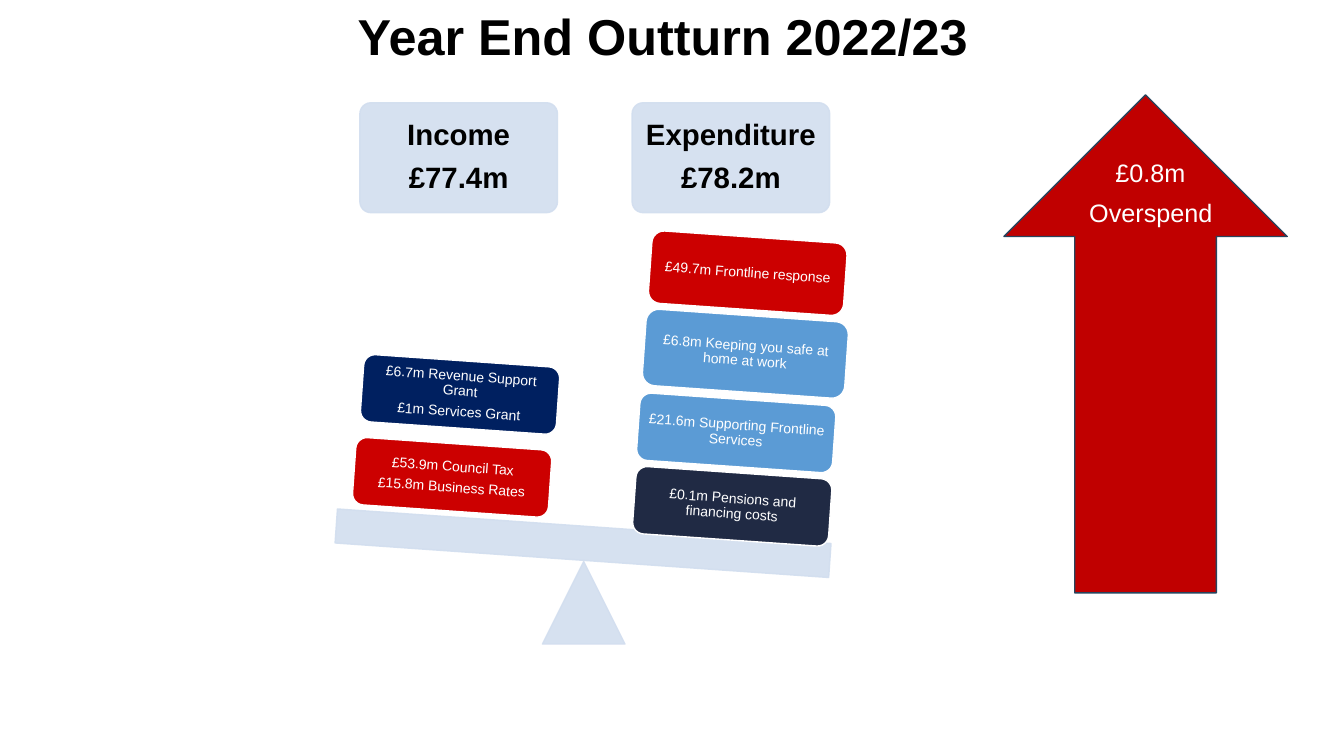
import pptx
import pptx.util
import pptx.dml.color
import pptx.enum.shapes
import pptx.enum.text
import lxml.etree
from dataclasses import dataclass
from pptx.util import Cm, Pt

TITLE = "Year End Outturn 2022/23"
HEADINGS = [("Income", "£77.4m"), ("Expenditure", "£78.2m")]
BLOCKS = [
    (["£53.9m Council Tax", "£15.8m Business Rates"], "red", (8.92, 11.18, 4.95, 1.7)),
    (["£6.7m Revenue Support Grant", "£1m Services Grant"], "navy", (9.12, 9.09, 4.95, 1.7)),
    (["£0.1m Pensions and financing costs"], "ink", (15.98, 11.91, 4.95, 1.7)),
    (["£21.6m Supporting Frontline Services"], "blue", (16.08, 10.06, 4.95, 1.7)),
    (["£6.8m Keeping you safe at home at work"], "blue", (16.23, 7.95, 5.11, 1.93)),
    (["£49.7m Frontline response"], "red", (16.38, 5.97, 4.93, 1.83)),
]
ARROW_LABELS = [("£0.8m", (27.86, 3.84, 2.51, 1.02)),
                ("Overspend", (27.2, 4.85, 3.84, 1.02))]

TITLE_BOX = (8.76, 0, 17.63, 1.8)
FIRST_HEADING = (9.07, 2.59, 4.98, 2.77)
HEADING_STEP = 6.86
FULCRUM = (13.67, 14.15, 2.08, 2.08)
BEAM = (8.46, 13.26, 12.47, 0.86)
ARROW = (25.3, 2.39, 7.14, 12.55)
TILT = 4


@dataclass(frozen=True)
class Theme:
    font: str = "Arial"
    black: str = "000000"
    white: str = "FFFFFF"
    pale: str = "D2DEEF"
    red: str = "CC0000"
    navy: str = "002060"
    blue: str = "5B9BD5"
    ink: str = "202A44"
    arrow: str = "C00000"
    arrow_line: str = "28445D"
    title_size: int = 36
    heading_size: int = 21
    label_size: int = 18
    block_size: int = 10


THEME = Theme()
KIND = pptx.enum.shapes.MSO_SHAPE
ALIGN = pptx.enum.text.PP_ALIGN
ANCHOR = pptx.enum.text.MSO_ANCHOR


def rgb(color):
    return pptx.dml.color.RGBColor.from_string(color)


def lengths(box):
    return [Cm(value) for value in box]


def add_figure(slide, kind, box, fill, line, rotation=0):
    shape = slide.shapes.add_shape(kind, *lengths(box))
    shape.shadow.inherit = False
    shape.rotation = rotation
    shape.fill.solid()
    shape.fill.fore_color.rgb = rgb(fill)
    shape.line.color.rgb = rgb(line)
    shape.line.width = Pt(1)
    return shape


def add_pale_figure(slide, kind, box, rotation=0):
    shape = add_figure(slide, kind, box, THEME.pale, THEME.pale, rotation)
    properties = shape.fill._xPr
    for color in properties.iter(pptx.oxml.ns.qn("a:srgbClr")):
        lxml.etree.SubElement(color, pptx.oxml.ns.qn("a:alpha"), val="90000")
    return shape


def style(paragraph, size, color, bold=False):
    font = paragraph.font
    font.name = THEME.font
    font.size = Pt(size)
    font.bold = bold
    font.color.rgb = rgb(color)


def write_lines(shape, lines, size, color, inset, bold=False):
    frame = shape.text_frame
    frame.word_wrap = True
    frame.vertical_anchor = ANCHOR.MIDDLE
    frame.margin_left = frame.margin_right = Cm(inset)
    frame.margin_top = frame.margin_bottom = Cm(inset)
    frame.text = "\n".join(lines)
    for paragraph in frame.paragraphs:
        paragraph.alignment = ALIGN.CENTER
        paragraph.line_spacing = 0.9
        paragraph.space_after = Pt(0.4 * size)
        style(paragraph, size, color, bold)


def add_title(slide):
    title = slide.shapes.title
    title.left, title.top, title.width, title.height = lengths(TITLE_BOX)
    frame = title.text_frame
    frame.auto_size = pptx.enum.text.MSO_AUTO_SIZE.NONE
    frame.vertical_anchor = ANCHOR.TOP
    frame.text = TITLE
    frame.paragraphs[0].alignment = ALIGN.LEFT
    style(frame.paragraphs[0], THEME.title_size, THEME.black, bold=True)


def add_balance(slide):
    left, top, width, height = FIRST_HEADING
    for index, lines in enumerate(HEADINGS):
        box = (left + index * HEADING_STEP, top, width, height)
        heading = add_pale_figure(slide, KIND.ROUNDED_RECTANGLE, box)
        heading.adjustments[0] = 0.1
        write_lines(heading, lines, THEME.heading_size, THEME.black, 0.22, bold=True)
    add_pale_figure(slide, KIND.ISOSCELES_TRIANGLE, FULCRUM)
    add_pale_figure(slide, KIND.RECTANGLE, BEAM, TILT)
    for lines, color, box in BLOCKS:
        block = add_figure(slide, KIND.ROUNDED_RECTANGLE, box,
                           getattr(THEME, color), THEME.white, TILT)
        write_lines(block, lines, THEME.block_size, THEME.white, 0.1)


def add_overspend(slide):
    add_figure(slide, KIND.UP_ARROW, ARROW, THEME.arrow, THEME.arrow_line)
    for text, box in ARROW_LABELS:
        frame = slide.shapes.add_textbox(*lengths(box)).text_frame
        frame.word_wrap = True
        frame.text = text
        style(frame.paragraphs[0], THEME.label_size, THEME.white)


def main():
    presentation = pptx.Presentation()
    presentation.slide_width, presentation.slide_height = Cm(33.87), Cm(19.05)
    slide = presentation.slides.add_slide(presentation.slide_layouts[5])
    add_title(slide)
    add_balance(slide)
    add_overspend(slide)
    presentation.save("out.pptx")


if __name__ == "__main__":
    main()
